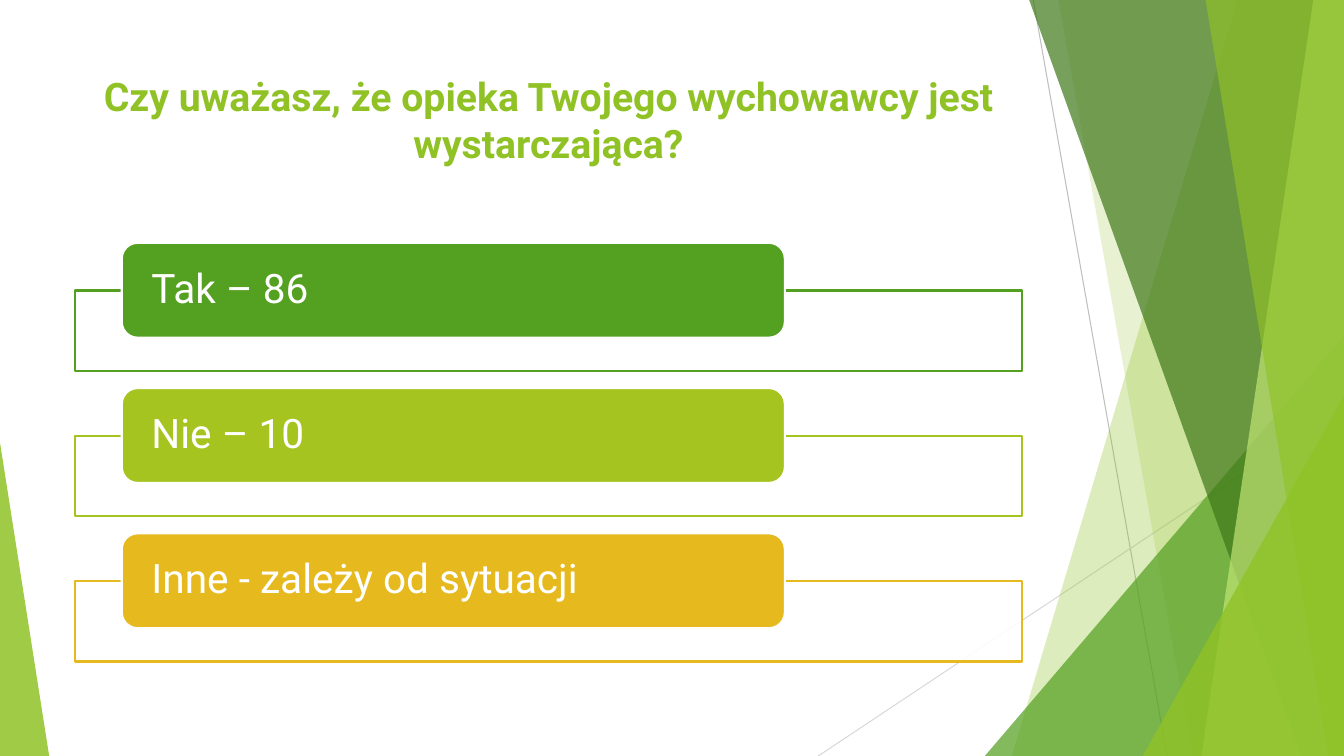
from dataclasses import dataclass

from lxml.etree import SubElement
from pptx import Presentation
from pptx.dml.color import RGBColor
from pptx.enum.shapes import MSO_CONNECTOR as Connector, MSO_SHAPE as Shape
from pptx.enum.text import MSO_ANCHOR as Anchor, MSO_AUTO_SIZE as AutoSize, PP_ALIGN as Align
from pptx.oxml.ns import qn
from pptx.util import Cm, Pt

WIDTH, HEIGHT = 33.87, 19.05


@dataclass(frozen=True)
class Theme:
    font: str = "Roboto"
    title_size: int = 28
    answer_size: int = 29
    hairline: float = 0.75
    outline: float = 1.5
    white: str = "FFFFFF"
    lime: str = "90C226"
    pale_lime: str = "C0E474"
    green: str = "54A021"
    forest: str = "3F7819"
    olive: str = "A5C41F"
    gold: str = "E6B91E"
    gray: str = "BFBFBF"
    light_gray: str = "D9D9D9"


class SlideBuilder:
    def __init__(self, page, theme):
        self.page = page
        self.theme = theme

    def paint(self, shape, fill, opacity=100, line=None):
        shape.shadow.inherit = False
        shape.fill.solid()
        shape.fill.fore_color.rgb = RGBColor.from_string(fill)
        if opacity < 100:
            color = shape._element.spPr.find(qn("a:solidFill")).find(qn("a:srgbClr"))
            SubElement(color, qn("a:alpha")).set("val", str(opacity * 1000))
        if line:
            shape.line.color.rgb = RGBColor.from_string(line)
            shape.line.width = Pt(self.theme.outline)
        else:
            shape.line.fill.background()

    def set_text(self, shape, text, size, color, align, bold=False):
        frame = shape.text_frame
        frame.text = text
        frame.word_wrap = True
        frame.auto_size = AutoSize.NONE
        para = frame.paragraphs[0]
        para.alignment = align
        for span in para.runs:
            span.font.name = self.theme.font
            span.font.size = Pt(size)
            span.font.bold = bold
            span.font.color.rgb = RGBColor.from_string(color)
        return frame, para

    def title(self, text, left, top, width, height):
        box = self.page.shapes.title
        box.left, box.top, box.width, box.height = map(Cm, (left, top, width, height))
        frame, _ = self.set_text(box, text, self.theme.title_size, self.theme.lime,
                                 Align.CENTER, bold=True)
        frame.vertical_anchor = Anchor.TOP

    def line(self, start, end, color):
        line = self.page.shapes.add_connector(
            Connector.STRAIGHT, *map(Cm, (*start, *end)))
        line.line.color.rgb = RGBColor.from_string(color)
        line.line.width = Pt(self.theme.hairline)
        SubElement(line._element.spPr, qn("a:effectLst"))

    def shard(self, top_left, bottom_left, color, opacity):
        """Draw a full-height panel with a slanted left side."""
        top = -0.02
        builder = self.page.shapes.build_freeform(Cm(top_left), Cm(top))
        corners = [(WIDTH, top), (WIDTH, HEIGHT), (bottom_left, HEIGHT)]
        builder.add_line_segments([(Cm(x), Cm(y)) for x, y in corners], close=True)
        self.paint(builder.convert_to_shape(), color, opacity)

    def box(self, kind, left, top, width, height, fill, opacity=100, line=None):
        box = self.page.shapes.add_shape(kind, *map(Cm, (left, top, width, height)))
        self.paint(box, fill, opacity, line)
        return box

    def corner(self, left, right, top, apex, color, opacity):
        """Draw a right triangle that stands on the bottom edge."""
        triangle = self.box(Shape.ISOSCELES_TRIANGLE, left, top, right - left,
                            HEIGHT - top, color, opacity)
        triangle.adjustments[0] = apex

    def answer(self, text, top, color):
        theme = self.theme
        self.box(Shape.RECTANGLE, 1.88, top, 23.88, 2.03, theme.white, 90, color)
        label = self.box(Shape.ROUNDED_RECTANGLE, 3.07, top - 1.2, 16.71, 2.39,
                         color, line=theme.white)
        frame, para = self.set_text(label, text, theme.answer_size, theme.white, Align.LEFT)
        frame.margin_left = frame.margin_right = Cm(0.63)
        frame.margin_top = frame.margin_bottom = 0
        frame.vertical_anchor = Anchor.MIDDLE
        para.line_spacing = 0.9


def main():
    deck = Presentation()
    deck.slide_width, deck.slide_height = Cm(WIDTH), Cm(HEIGHT)
    theme = Theme()
    slide = SlideBuilder(deck.slides.add_slide(deck.slide_layouts[5]), theme)

    # Background facets
    slide.line((26.04, 0), (29.41, HEIGHT), theme.gray)
    slide.line((WIDTH, 10.24), (20.62, HEIGHT), theme.light_gray)
    slide.shard(31.19, 25.5, theme.lime, 30)
    slide.shard(26.67, 30.05, theme.lime, 20)
    slide.corner(24.82, WIDTH, 8.46, 1, theme.green, 72)
    slide.shard(25.93, 32.79, theme.forest, 70)
    slide.shard(33.1, 30.28, theme.pale_lime, 70)
    slide.shard(30.38, 33.48, theme.lime, 65)
    slide.corner(28.8, WIDTH, 9.98, 1, theme.lime, 80)
    slide.corner(0, 1.24, 11.15, 0, theme.lime, 85)

    # Question
    slide.title("Czy uważasz, że opieka Twojego wychowawcy jest wystarczająca?",
                1.88, 1.7, 23.88, 3.66)

    # Answers
    answers = [
        ("Tak – 86", theme.green),
        ("Nie – 10", theme.olive),
        ("Inne - zależy od sytuacji", theme.gold),
    ]
    for row, (text, color) in enumerate(answers):
        slide.answer(text, 7.32 + row * 3.66, color)

    deck.save("out.pptx")


if __name__ == "__main__":
    main()
